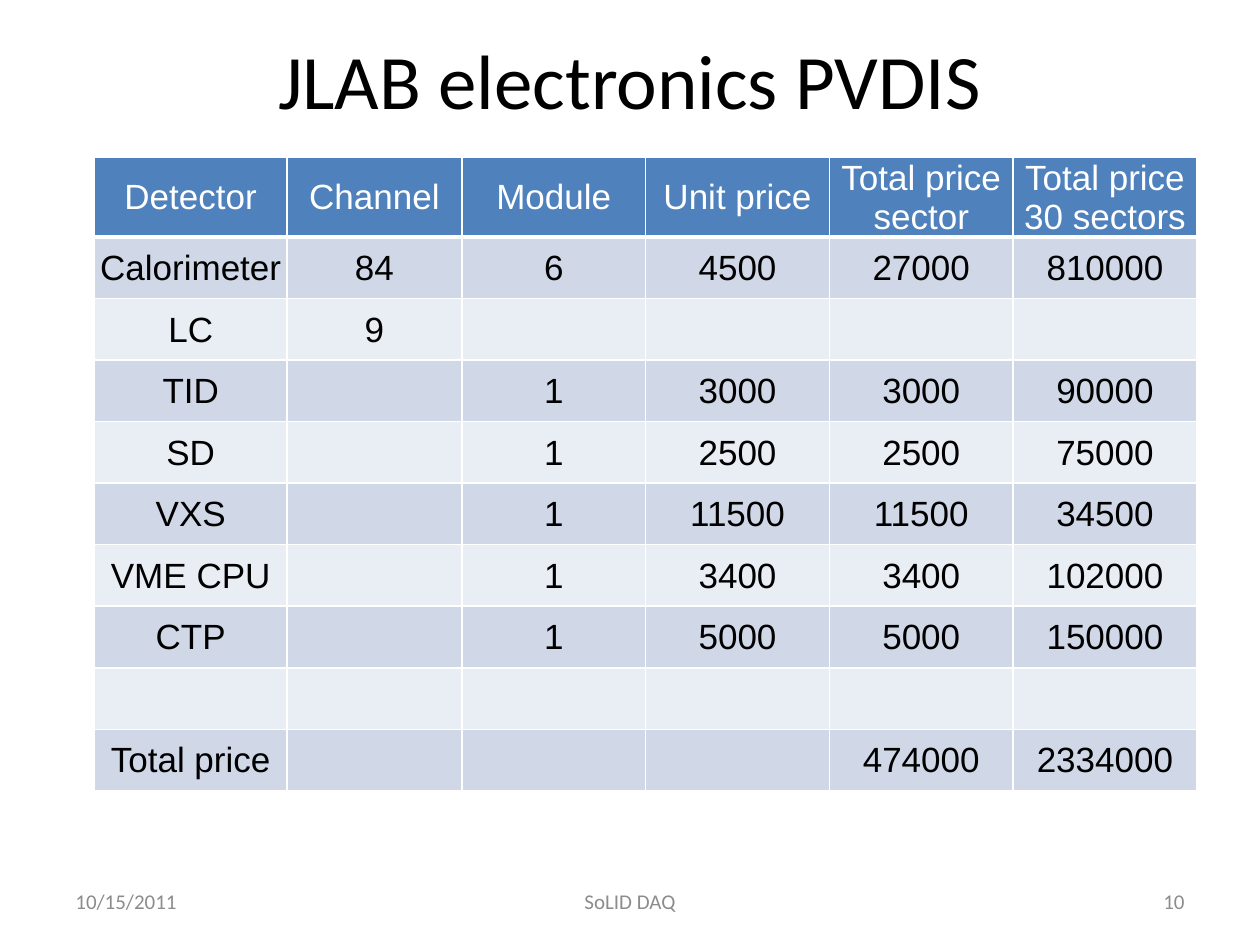
from pptx import Presentation
from pptx import util as u
from pptx.dml.color import RGBColor
from pptx.enum import text
from pptx.oxml.ns import qn
from lxml import etree

# Content
TITLE = "JLAB electronics PVDIS"
HEADER = ["Detector", "Channel", "Module", "Unit price", "Total price sector", "Total price 30 sectors"]
PRICES = [
    ["Calorimeter", "84", "6", "4500", "27000", "810000"],
    ["LC", "9", "", "", "", ""],
    ["TID", "", "1", "3000", "3000", "90000"],
    ["SD", "", "1", "2500", "2500", "75000"],
    ["VXS", "", "1", "11500", "11500", "34500"],
    ["VME CPU", "", "1", "3400", "3400", "102000"],
    ["CTP", "", "1", "5000", "5000", "150000"],
    ["", "", "", "", "", ""],
    ["Total price", "", "", "", "474000", "2334000"],
]
# Footer: text, left, width, alignment
FOOTER = [
    ("10/15/2011", 36, 168, "LEFT"),
    ("SoLID DAQ", 246, 228, "CENTER"),
    ("10", 516, 168, "RIGHT"),
]

THEME = {
    "heading_font": "Calibri", "table_font": "Arial",
    "title_size": 44, "table_size": 20, "footer_size": 12,
    "black": "000000", "white": "FFFFFF", "grey": "8C8C8C",
    "header": "4F81BD", "bands": ("D0D8E8", "E9EDF4"),
}

# Geometry in points
COLUMN_WIDTHS = [110, 100] + [105] * 4
HEADER_HEIGHT, ROW_HEIGHT = 44.64, 35.2
THIN, THICK = 1, 3


def write(frame, words, *, size, color, font, align="CENTER"):
    frame.word_wrap = True
    frame.vertical_anchor = text.MSO_ANCHOR.MIDDLE
    para = frame.paragraphs[0]
    para.alignment = getattr(text.PP_ALIGN, align)
    span = para.add_run()
    span.text = words
    span.font.size = u.Pt(size)
    span.font.name = font
    span.font.bold = False
    span.font.color.rgb = RGBColor.from_string(color)


def draw_borders(cell, top, bottom):
    properties = cell._tc.get_or_add_tcPr()
    edges = [("a:lnL", THIN), ("a:lnR", THIN), ("a:lnT", top), ("a:lnB", bottom)]
    for position, (tag, width) in enumerate(edges):
        line = etree.Element(qn(tag), w=str(u.Pt(width)))
        fill = etree.SubElement(line, qn("a:solidFill"))
        etree.SubElement(fill, qn("a:srgbClr"), val=THEME["white"])
        properties.insert(position, line)


def add_title(page):
    box = page.shapes.title
    box.left, box.top, box.width, box.height = u.Pt(36), u.Pt(0), u.Pt(648), u.Pt(90)
    write(box.text_frame, TITLE, size=THEME["title_size"],
          color=THEME["black"], font=THEME["heading_font"])


def add_price_table(page):
    rows = [HEADER] + PRICES
    height = HEADER_HEIGHT + ROW_HEIGHT * len(PRICES)
    table = page.shapes.add_table(len(rows), len(HEADER), u.Pt(54), u.Pt(90),
                                  u.Pt(sum(COLUMN_WIDTHS)), u.Pt(height)).table
    for column, width in zip(table.columns, COLUMN_WIDTHS):
        column.width = u.Pt(width)
    for r, values in enumerate(rows):
        is_header = r == 0
        table.rows[r].height = u.Pt(HEADER_HEIGHT if is_header else ROW_HEIGHT)
        for c, value in enumerate(values):
            cell = table.cell(r, c)
            cell.fill.solid()
            cell.fill.fore_color.rgb = RGBColor.from_string(
                THEME["header"] if is_header else THEME["bands"][(r - 1) % 2])
            draw_borders(cell, THICK if r == 1 else THIN, THICK if is_header else THIN)
            cell.margin_left = cell.margin_right = cell.margin_top = u.Pt(0.72)
            cell.margin_bottom = u.Pt(0)
            cell.vertical_anchor = text.MSO_ANCHOR.MIDDLE
            if value:
                write(cell.text_frame, value, size=THEME["table_size"],
                      color=THEME["white" if is_header else "black"],
                      font=THEME["table_font"])


def add_footer(page):
    for words, left, width, align in FOOTER:
        box = page.shapes.add_textbox(u.Pt(left), u.Pt(500.5), u.Pt(width), u.Pt(28.75))
        write(box.text_frame, words, size=THEME["footer_size"], color=THEME["grey"],
              font=THEME["heading_font"], align=align)


def main():
    deck = Presentation()
    deck.slide_width, deck.slide_height = u.Pt(720), u.Pt(540)
    page = deck.slides.add_slide(deck.slide_layouts[5])
    add_title(page)
    add_price_table(page)
    add_footer(page)
    deck.save("out.pptx")


if __name__ == "__main__":
    main()
